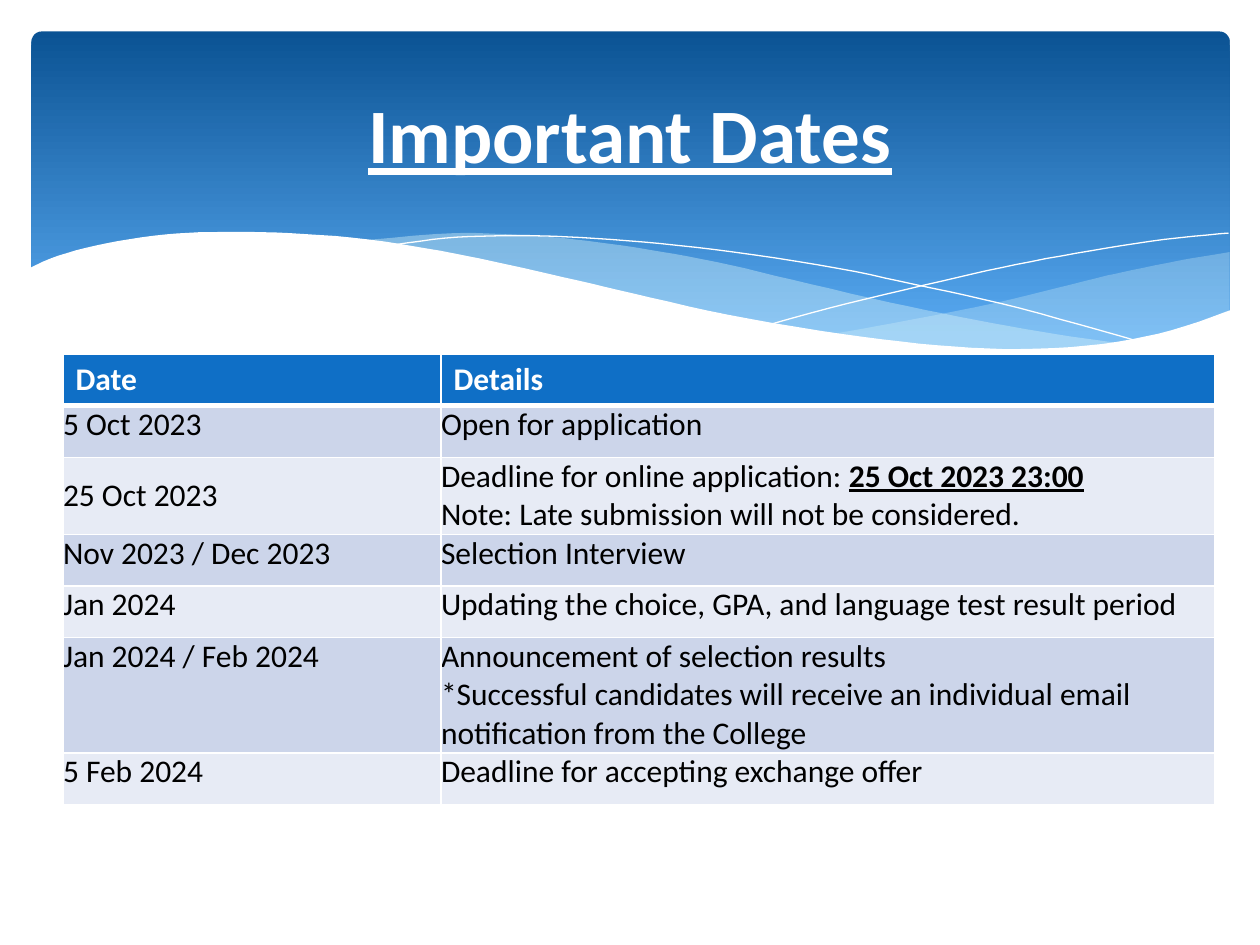
from dataclasses import dataclass

from lxml import etree
from pptx import Presentation
from pptx.dml.color import RGBColor
from pptx.enum.shapes import MSO_SHAPE
from pptx.enum.text import MSO_ANCHOR, MSO_AUTO_SIZE, PP_ALIGN
from pptx.oxml.ns import qn
from pptx.util import Inches, Pt

ROUNDED = MSO_SHAPE.ROUNDED_RECTANGLE
TOP, MIDDLE = MSO_ANCHOR.TOP, MSO_ANCHOR.MIDDLE
NO_AUTOFIT = MSO_AUTO_SIZE.NONE
CENTER = PP_ALIGN.CENTER
TITLE_ONLY_LAYOUT = 5
GRID_COLUMNS, GRID_ROWS = 40, 30
CELL = Inches(0.25)
CURVE_STEPS = 5


@dataclass(frozen=True)
class Theme:
    """Colours, font and type sizes of the slide."""
    font: str = "Calibri"
    title_size: int = 44
    table_size: int = 18
    white: str = "FFFFFF"
    text: str = "000000"
    band_top: str = "0B5394"
    band_bottom: str = "59AAF2"
    ripple: str = "DBF5F9"
    header: str = "0F6FC6"
    stripes: tuple = ("CCD5EA", "E7EBF5")


THEME = Theme()

RIGHT_RIPPLE = [
    [(39.04, 8), (37.4, 8.28), (35.64, 8.64), (34.44, 8.92), (32.2, 9.48),
     (30.12, 9.92), (28.24, 10.28), (26.44, 10.6)],
    [(26.44, 10.6), (28.2, 10.84), (30.28, 11.04), (32.12, 11.12),
     (34.16, 11.04), (35.88, 10.8), (37.4, 10.48), (39.04, 9.88)],
]
LEFT_RIPPLE = [
    [(35.72, 10.92), (33.48, 10.6), (31, 10.16), (28.24, 9.6), (25.16, 8.88),
     (22.76, 8.32), (20.56, 7.92), (18.6, 7.64), (16.8, 7.48), (14.44, 7.4),
     (11.44, 7.64)],
    [(11.44, 7.64), (13.68, 7.96), (16.16, 8.44), (17.96, 8.88), (21.2, 9.6),
     (24.04, 10.2), (26.6, 10.64), (28.88, 10.96), (30.92, 11.08),
     (32.72, 11.12), (34.28, 11.08), (35.72, 10.92)],
]
FALLING_LINE = [
    [(12.36, 7.8), (14.12, 7.56), (16.04, 7.48), (18, 7.52), (20.4, 7.68),
     (23.28, 8), (26.6, 8.52), (29.08, 9.04), (31.8, 9.64), (34.76, 10.44),
     (36.28, 10.88)],
]
RISING_LINE = [
    [(24.52, 10.28), (26.88, 9.64), (29.92, 8.92), (32.24, 8.4),
     (34.64, 7.96), (36.96, 7.6), (39, 7.4)],
]
WHITE_WAVE = [
    [(39.08, 9.84), (37.2, 10.48), (35, 10.92), (32.36, 11.08),
     (29.76, 10.96), (26.72, 10.6), (23.16, 10), (20.12, 9.32), (17.88, 8.8),
     (14.6, 8.08), (11.68, 7.6), (9.2, 7.4), (7.08, 7.36), (5.28, 7.44),
     (3.4, 7.72), (1.84, 8.12), (0.92, 8.52)],
    [(0.92, 13.16), (39.08, 13.16)],
]

HEADINGS = ["Date", "Details"]
DATES = [
    ("5 Oct 2023", [["Open for application"]], TOP),
    ("25 Oct 2023",
     [["Deadline for online application: ", "25 Oct 2023 23:00"],
      ["Note: Late submission will not be considered."]], MIDDLE),
    ("Nov 2023 / Dec 2023", [["Selection Interview"]], TOP),
    ("Jan 2024",
     [["Updating the choice, GPA, and language test result period"]], TOP),
    ("Jan 2024 / Feb 2024",
     [["Announcement of selection results"],
      ["*Successful candidates will receive an individual email "
       "notification from the College"]], TOP),
    ("5 Feb 2024", [["Deadline for accepting exchange offer"]], TOP),
]


def grid(*cells):
    """Turn grid cells into lengths."""
    return [int(cell * CELL) for cell in cells]


def color(value):
    """Return the colour for a hex value."""
    return RGBColor.from_string(value)


def smooth(points):
    """Return the points of a Catmull-Rom curve through the given points."""
    padded = [points[0], *points, points[-1]]
    curve = [points[0]]
    for window in zip(padded, padded[1:], padded[2:], padded[3:]):
        for step in range(1, CURVE_STEPS + 1):
            t = step / CURVE_STEPS
            curve.append(tuple(
                b + t * (c - a) / 2
                + t * t * (2 * a - 5 * b + 4 * c - d) / 2
                + t ** 3 * (3 * b - a - 3 * c + d) / 2
                for a, b, c, d in zip(*window)))
    return curve


def add_wave(slide, edges, fill=None, opacity=100):
    """Draw smooth edges as a filled area, or as a hairline without fill."""
    points = [(x * 100, y * 100) for edge in edges for x, y in smooth(edge)]
    builder = slide.shapes.build_freeform(*points[0], scale=CELL / 100)
    builder.add_line_segments(points[1:], close=fill is not None)
    shape = builder.convert_to_shape()
    shape.shadow.inherit = False
    if fill is None:
        shape.fill.background()
        shape.line.color.rgb = color(THEME.white)
        shape.line.width = Pt(0)
        return
    shape.line.fill.background()
    shape.fill.solid()
    shape.fill.fore_color.rgb = color(fill)
    if opacity < 100:
        rgb = shape.element.spPr.find(".//" + qn("a:srgbClr"))
        etree.SubElement(rgb, qn("a:alpha"), val=str(opacity * 1000))


def add_band(slide):
    """Draw the rounded gradient band behind the title."""
    band = slide.shapes.add_shape(ROUNDED, *grid(1, 1, 38.04, 10.8))
    band.adjustments[0] = 0.03
    band.shadow.inherit = False
    band.line.fill.background()
    band.fill.gradient()
    band.fill.gradient_angle = 270
    stops = [(0, THEME.band_top), (0.9, THEME.band_bottom)]
    for stop, (position, value) in zip(band.fill.gradient_stops, stops):
        stop.position = position
        stop.color.rgb = color(value)


def style_font(font, size, value, bold=False):
    """Set face, size, colour and weight of a font."""
    font.name, font.size, font.bold = THEME.font, Pt(size), bold
    font.color.rgb = color(value)


def set_title(slide, text):
    """Fill the title placeholder and bring it in front of the band."""
    title = slide.shapes.title
    title.left, title.top, title.width, title.height = grid(2, 1.48, 36, 5.48)
    frame = title.text_frame
    frame.text = text
    frame.vertical_anchor = MIDDLE
    frame.auto_size = NO_AUTOFIT
    paragraph = frame.paragraphs[0]
    paragraph.alignment = CENTER
    style_font(paragraph.font, THEME.title_size, THEME.white, bold=True)
    paragraph.font.underline = True
    title.element.getparent().append(title.element)


def add_border(cell, side, width):
    """Give one side of a cell a white border."""
    line = etree.SubElement(cell._tc.get_or_add_tcPr(), qn("a:ln" + side),
                            w=str(Pt(width)))
    fill = etree.SubElement(line, qn("a:solidFill"))
    etree.SubElement(fill, qn("a:srgbClr"), val=THEME.white)


def fill_cell(cell, paragraphs, fill, value, header=False):
    """Write paragraphs of runs, where a second run is emphasised."""
    for side in "LRTB":
        add_border(cell, side, 3 if header and side == "B" else 1)
    cell.fill.solid()
    cell.fill.fore_color.rgb = color(fill)
    frame = cell.text_frame
    for index, texts in enumerate(paragraphs):
        paragraph = frame.add_paragraph() if index else frame.paragraphs[0]
        style_font(paragraph.font, THEME.table_size, value, header)
        for order, text in enumerate(texts):
            run = paragraph.add_run()
            run.text = text
            if order:
                run.font.bold = run.font.underline = True


def add_dates_table(slide):
    """Build the table of dates with a header and striped rows."""
    row_count = len(DATES) + 1
    frame = slide.shapes.add_table(
        row_count, len(HEADINGS), *grid(2, 11.24, 36.56, 1.64 * row_count))
    table = frame.table
    for column, width in zip(table.columns, grid(12, 24.56)):
        column.width = width
    for column, heading in enumerate(HEADINGS):
        fill_cell(table.cell(0, column), [[heading]], THEME.header,
                  THEME.white, header=True)
    for row, (date, details, anchor) in enumerate(DATES, start=1):
        for column, paragraphs in enumerate(([[date]], details)):
            cell = table.cell(row, column)
            cell.margin_left = cell.margin_right = 0
            cell.margin_top = cell.margin_bottom = 0
            cell.vertical_anchor = anchor
            fill_cell(cell, paragraphs, THEME.stripes[(row - 1) % 2],
                      THEME.text)


def main():
    """Build the slide and save it."""
    presentation = Presentation()
    presentation.slide_width, presentation.slide_height = grid(
        GRID_COLUMNS, GRID_ROWS)
    slide = presentation.slides.add_slide(
        presentation.slide_layouts[TITLE_ONLY_LAYOUT])
    add_band(slide)
    add_wave(slide, RIGHT_RIPPLE, THEME.ripple, 29)
    add_wave(slide, LEFT_RIPPLE, THEME.ripple, 40)
    add_wave(slide, FALLING_LINE)
    add_wave(slide, RISING_LINE)
    add_wave(slide, WHITE_WAVE, THEME.white)
    set_title(slide, "Important Dates")
    add_dates_table(slide)
    presentation.save("out.pptx")


if __name__ == "__main__":
    main()
